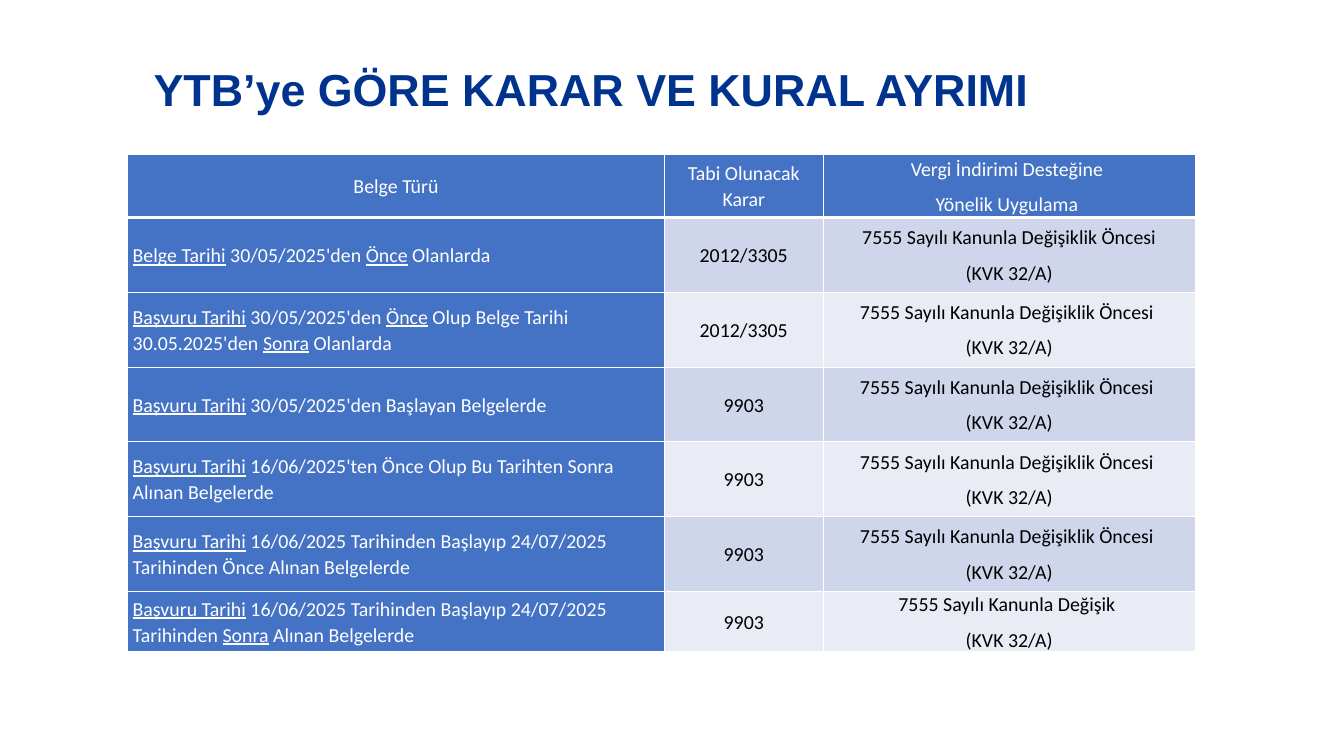
from lxml.etree import SubElement
from pptx import Presentation
from pptx.dml.color import RGBColor as RGB
from pptx.enum.text import MSO_ANCHOR as ANCHOR, MSO_AUTO_SIZE as FIT, PP_ALIGN as ALIGN
from pptx.oxml.ns import qn
from pptx.util import Inches, Pt

NAVY = RGB(0x00, 0x33, 0x8D)
BLUE = RGB(0x44, 0x72, 0xC4)
DARK = RGB(0xCF, 0xD5, 0xEA)
PALE = RGB(0xE9, 0xEB, 0xF5)
WHITE = RGB(0xFF, 0xFF, 0xFF)
BLACK = RGB(0x00, 0x00, 0x00)

# Table text: underscores enclose underlined words, line breaks part paragraphs
BEFORE = "7555 Sayılı Kanunla Değişiklik Öncesi \n(KVK 32/A)"
ROWS = [
    ("Belge Türü", "Tabi Olunacak Karar",
     "Vergi İndirimi Desteğine \nYönelik Uygulama "),
    ("_Belge Tarihi_ 30/05/2025'den _Önce_ Olanlarda", "2012/3305",
     "7555 Sayılı Kanunla Değişiklik Öncesi\n(KVK 32/A)"),
    ("_Başvuru Tarihi_ 30/05/2025'den _Önce_ Olup Belge Tarihi "
     "30.05.2025'den _Sonra_ Olanlarda", "2012/3305", BEFORE),
    ("_Başvuru Tarihi_ 30/05/2025'den Başlayan Belgelerde", "9903", BEFORE),
    ("_Başvuru Tarihi_ 16/06/2025'ten Önce Olup Bu Tarihten Sonra "
     "Alınan Belgelerde", "9903", BEFORE),
    ("_Başvuru Tarihi_ 16/06/2025 Tarihinden Başlayıp 24/07/2025 "
     "Tarihinden Önce Alınan Belgelerde", "9903", BEFORE),
    ("_Başvuru Tarihi_ 16/06/2025 Tarihinden Başlayıp 24/07/2025 "
     "Tarihinden _Sonra_ Alınan Belgelerde", "9903",
     "7555 Sayılı Kanunla Değişik \n(KVK 32/A)"),
]
WIDTHS = [6.39, 1.89, 4.43]
HEIGHTS = [0.75] + [0.89] * 5 + [0.72]


def add_run(par, text, font, size, color):
    run = par.add_run()
    run.text = text
    run.font.name = font
    run.font.size = Pt(size)
    run.font.color.rgb = color
    return run


def add_edge(cell, side, width):
    line = SubElement(cell._tc.get_or_add_tcPr(), qn("a:ln" + side), w=str(Pt(width)))
    fill = SubElement(line, qn("a:solidFill"))
    SubElement(fill, qn("a:srgbClr"), val=str(WHITE))


prs = Presentation()
prs.slide_width, prs.slide_height = Inches(16), Inches(9)
slide = prs.slides.add_slide(prs.slide_layouts[6])

# Title
box = slide.shapes.add_textbox(Inches(1.08), Inches(0.68), Inches(11.91), Inches(0.75))
frame = box.text_frame
frame.word_wrap = True
frame.auto_size = FIT.SHAPE_TO_FIT_TEXT
par = frame.paragraphs[0]
par.alignment = ALIGN.CENTER
run = add_run(par, "YTB’ye GÖRE KARAR VE KURAL AYRIMI", "Arial", 38.4, NAVY)
run.font.bold = True

# Table grid
table = slide.shapes.add_table(
    len(ROWS), len(WIDTHS), Inches(1.52), Inches(1.84),
    Inches(sum(WIDTHS)), Inches(sum(HEIGHTS))).table
for col, width in zip(table.columns, WIDTHS):
    col.width = Inches(width)
for row, height in zip(table.rows, HEIGHTS):
    row.height = Inches(height)

# Table cells
for r, texts in enumerate(ROWS):
    for c, text in enumerate(texts):
        cell = table.cell(r, c)
        head = r == 0 or c == 0
        cell.vertical_anchor = ANCHOR.MIDDLE
        cell.margin_left = cell.margin_right = Inches(0.06)
        cell.margin_top = cell.margin_bottom = 0
        for side in "LRTB":
            add_edge(cell, side, 3 if r == 0 and side == "B" else 1)
        cell.fill.solid()
        cell.fill.fore_color.rgb = BLUE if head else DARK if r % 2 else PALE
        frame = cell.text_frame
        for i, line in enumerate(text.split("\n")):
            par = frame.add_paragraph() if i else frame.paragraphs[0]
            par.alignment = ALIGN.LEFT if r and c == 0 else ALIGN.CENTER
            par.line_spacing = 1.07
            par.space_after = Pt(8)
            for n, part in enumerate(line.split("_")):
                if part:
                    run = add_run(par, part, "Calibri", 17, WHITE if head else BLACK)
                    run.font.underline = n % 2 == 1

prs.save("out.pptx")
